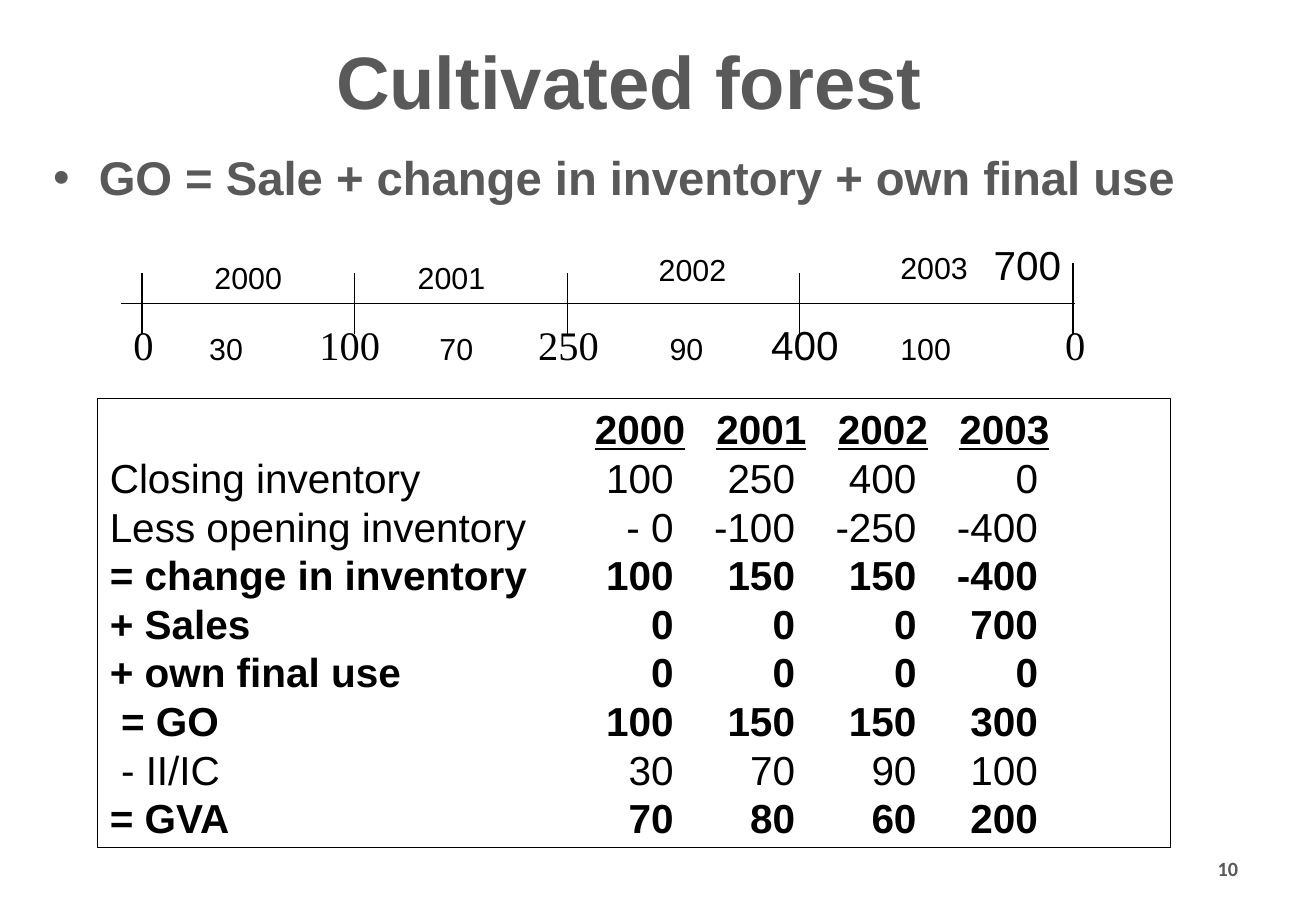
from pptx import Presentation
from pptx.dml.color import RGBColor
from pptx.enum.shapes import MSO_CONNECTOR, MSO_SHAPE
from pptx.enum.text import MSO_ANCHOR, PP_ALIGN
from pptx.oxml.ns import qn
from pptx.util import Pt
from lxml import etree

LEFT, CENTER, RIGHT = PP_ALIGN.LEFT, PP_ALIGN.CENTER, PP_ALIGN.RIGHT
TOP, MIDDLE = MSO_ANCHOR.TOP, MSO_ANCHOR.MIDDLE
STRAIGHT, RECTANGLE = MSO_CONNECTOR.STRAIGHT, MSO_SHAPE.RECTANGLE
SERIF = "Times New Roman"
GREY, BLACK, WHITE = "595959", "000000", "FFFFFF"

YEARS = ["2000", "2001", "2002", "2003"]
TICKS = [(12.2, 24), (138.2, 24), (264.2, 24), (401.8, 24), (564, 18)]
YEAR_SPOTS = [(48, 12), (168.5, 12), (311.3, 7.5), (454.5, 6.2)]
STOCKS = [("0", 0, SERIF), ("100", 110.2, SERIF), ("250", 239.8, SERIF),
          ("400", 378, "Arial"), ("0", 552.2, SERIF)]
COSTS = [("30", 44.9), ("70", 181.4), ("90", 317.8), ("100", 454.5)]
ACCOUNT = [
    ("Closing inventory", ["100", "250", "400", "0"], False),
    ("Less opening inventory", ["- 0", "-100", "-250", "-400"], False),
    ("= change in inventory", ["100", "150", "150", "-400"], True),
    ("+ Sales", ["0", "0", "0", "700"], True),
    ("+ own final use", ["0", "0", "0", "0"], True),
    ("\t= GO", ["100", "150", "150", "300"], True),
    ("\t- II/IC", ["30", "70", "90", "100"], False),
    ("= GVA", ["70", "80", "60", "200"], True),
]


def color(value):
    return RGBColor.from_string(value)


def style(r, size, name="Arial", value=BLACK, bold=False):
    r.font.size, r.font.name, r.font.bold = Pt(size), name, bold
    r.font.color.rgb = color(value)


def fill_veil(sp):
    sp.fill.solid()
    sp.fill.fore_color.rgb = color(WHITE)
    tint = sp._element.spPr.find(qn("a:solidFill"))[0]
    etree.SubElement(tint, qn("a:alpha"), val="60000")


def add_text(s, text, x, y, w, h, size, name="Arial", value=BLACK,
             bold=False, align=LEFT, anchor=TOP):
    sp = s.shapes.add_textbox(Pt(x), Pt(y), Pt(w), Pt(h))
    tf = sp.text_frame
    tf.word_wrap, tf.vertical_anchor = True, anchor
    p = tf.paragraphs[0]
    p.text, p.alignment = text, align
    style(p.runs[0], size, name, value, bold)
    return sp


def add_line(s, x1, y1, x2, y2):
    line = s.shapes.add_connector(STRAIGHT, Pt(x1), Pt(y1), Pt(x2), Pt(y2))
    line.line.color.rgb, line.line.width = color(BLACK), Pt(0.75)
    etree.SubElement(line._element.spPr, qn("a:effectLst"))


def add_title(s, x, y, w, h):
    sp = s.shapes.title
    sp.left, sp.top, sp.width, sp.height = Pt(x), Pt(y), Pt(w), Pt(h)
    fill_veil(sp)
    tf = sp.text_frame
    tf.text, tf.vertical_anchor = "Cultivated forest", MIDDLE
    p = tf.paragraphs[0]
    p.alignment = CENTER
    style(p.runs[0], 44, value=GREY, bold=True)


def add_formula(s, x, y, w, h):
    sp = add_text(s, "GO = Sale + change in inventory + own final use",
                  x, y, w, h, 28, value=GREY, bold=True)
    fill_veil(sp)
    pPr = sp.text_frame.paragraphs[0]._p.get_or_add_pPr()
    pPr.set("marL", str(Pt(27)))
    pPr.set("indent", str(Pt(-27)))
    etree.SubElement(pPr, qn("a:buFont"), typeface="Arial")
    etree.SubElement(pPr, qn("a:buChar"), char="•")


def add_page_number(s, x, y, w, h):
    sp = add_text(s, "10", x, y, w, h, 12, "Calibri", GREY, True, RIGHT, MIDDLE)
    fill_veil(sp)


def add_timeline(s, x, y, w, h):
    add_line(s, x, y + 42, x + w, y + 42)
    for dx, dy in TICKS:
        add_line(s, x + dx, y + dy, x + dx, y + h)
    for year, (dx, dy) in zip(YEARS, YEAR_SPOTS):
        add_text(s, year, x + dx, y + dy, 65, 29, 18)
    for stock, dx, name in STOCKS:
        add_text(s, stock, x + dx, y + 48.2, 65, 36, 24, name)
    for cost, dx in COSTS:
        add_text(s, cost, x + dx, y + 54.2, 65, 29, 18)
    add_text(s, "700", x + 509.8, y + 0.5, 65, 36, 24)


def add_row(p, label, values, bold, first_stop, underline=False):
    p.alignment, p.line_spacing = LEFT, Pt(28.8)
    tabs = etree.SubElement(p._p.get_or_add_pPr(), qn("a:tabLst"))
    if label.startswith("\t"):
        etree.SubElement(tabs, qn("a:tab"), pos=str(Pt(6.7)), algn="l")
    for i in range(len(values)):
        etree.SubElement(tabs, qn("a:tab"), pos=str(Pt(first_stop + 72 * i)), algn="r")
    for text in [label] + [part for v in values for part in ("\t", v)]:
        if text:
            r = p.add_run()
            r.text = text
            style(r, 24, bold=bold)
            r.font.underline = underline and text != "\t"


def add_account(s, x, y, w, h):
    sp = s.shapes.add_shape(RECTANGLE, Pt(x), Pt(y), Pt(w), Pt(h))
    sp.shadow.inherit = False
    sp.fill.background()
    sp.line.color.rgb, sp.line.width = color(BLACK), Pt(0.75)
    tf = sp.text_frame
    tf.word_wrap, tf.vertical_anchor = True, TOP
    add_row(tf.paragraphs[0], "", YEARS, True, 341, underline=True)
    for label, values, bold in ACCOUNT:
        add_row(tf.add_paragraph(), label, values, bold, 334.2)


def main():
    prs = Presentation()
    prs.slide_width, prs.slide_height = Pt(780), Pt(540)
    s = prs.slides.add_slide(prs.slide_layouts[5])
    add_title(s, 24.4, 16.6, 697, 62)
    add_formula(s, 24.5, 84.5, 726, 426)
    add_page_number(s, 558.7, 500.4, 182.2, 28.8)
    add_timeline(s, 72, 138, 565, 60)
    add_account(s, 58, 236.2, 635.8, 266.4)
    prs.save("out.pptx")


if __name__ == "__main__":
    main()
